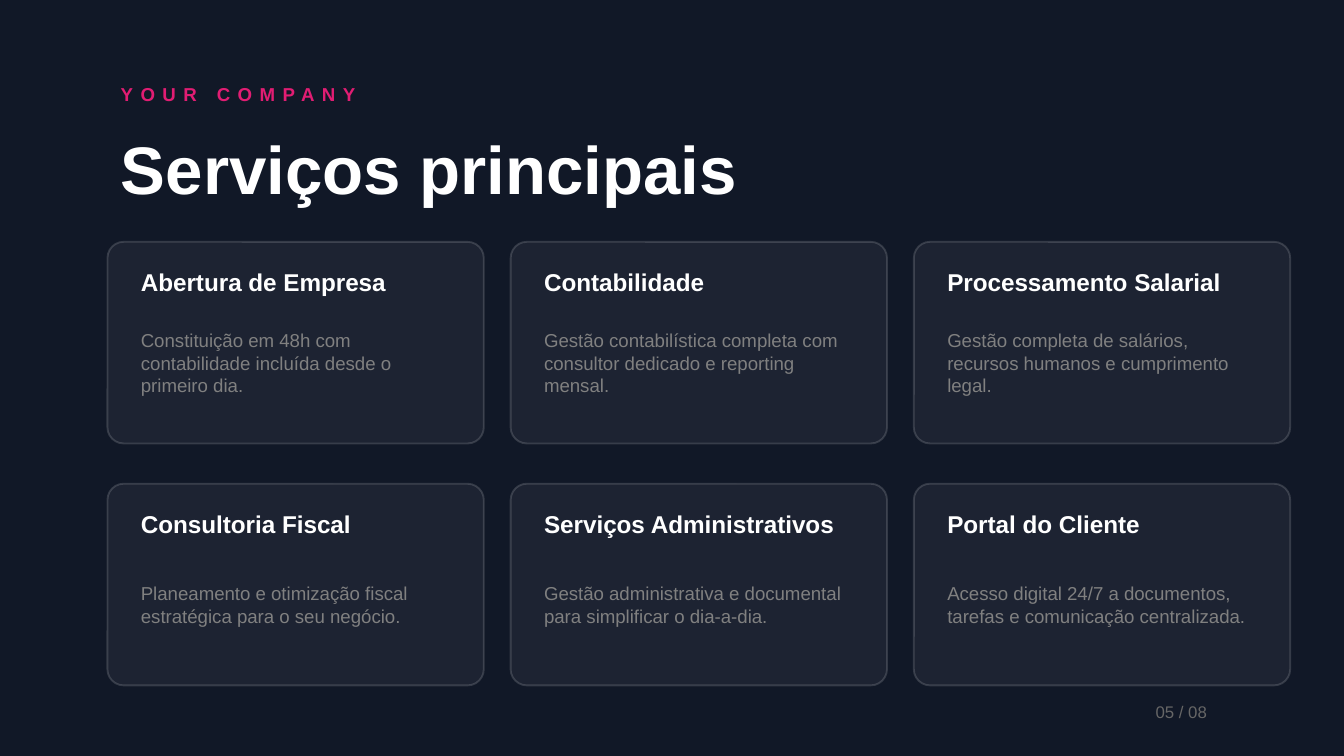
from lxml import etree
from pptx import Presentation
from pptx.dml.color import RGBColor
from pptx.enum.shapes import MSO_SHAPE
from pptx.enum.text import MSO_ANCHOR, MSO_AUTO_SIZE, PP_ALIGN
from pptx.oxml.ns import qn
from pptx.util import Pt

ROUNDED = MSO_SHAPE.ROUNDED_RECTANGLE
MIDDLE = MSO_ANCHOR.MIDDLE
NO_AUTOFIT = MSO_AUTO_SIZE.NONE
LEFT = PP_ALIGN.LEFT

PX = 4572  # EMU per px, 200 px to the inch
FONT = "Arial"
TITLE_ONLY = 5
COLORS = {
    "background": "111827",
    "accent": "E11D73",
    "white": "FFFFFF",
    "description": "808080",
    "page": "666666",
}
SERVICES = [
    ("Abertura de Empresa",
     "Constituição em 48h com contabilidade incluída desde o primeiro dia."),
    ("Contabilidade",
     "Gestão contabilística completa com consultor dedicado e reporting mensal."),
    ("Processamento Salarial",
     "Gestão completa de salários, recursos humanos e cumprimento legal."),
    ("Consultoria Fiscal",
     "Planeamento e otimização fiscal estratégica para o seu negócio."),
    ("Serviços Administrativos",
     "Gestão administrativa e documental para simplificar o dia-a-dia."),
    ("Portal do Cliente",
     "Acesso digital 24/7 a documentos, tarefas e comunicação centralizada."),
]


def emu(*lengths):
    return [length * PX for length in lengths]


def rgb(name):
    return RGBColor.from_string(COLORS[name])


def write(slide, box, text, size, color, bold=False, spacing=0, holder=None):
    """Put text in the box, in a placeholder if one is given; spacing is in points."""
    if holder is None:
        holder = slide.shapes.add_textbox(*emu(*box))
    else:
        holder.left, holder.top, holder.width, holder.height = emu(*box)
    frame = holder.text_frame
    frame.word_wrap = True
    frame.auto_size = NO_AUTOFIT
    frame.vertical_anchor = MIDDLE
    paragraph = frame.paragraphs[0]
    paragraph.alignment = LEFT
    run = paragraph.add_run()
    run.text = text
    run.font.name = FONT
    run.font.size = Pt(size)
    run.font.bold = bold
    run.font.color.rgb = rgb(color)
    if spacing:
        run.font._element.set("spc", str(spacing * 100))


def set_opacity(fill_parent, percent):
    color = fill_parent.find(qn("a:solidFill"))[0]
    etree.SubElement(color, qn("a:alpha")).set("val", str(percent * 1000))


def add_header(slide, left, top, width):
    write(slide, (left, top, width, 80), "YOUR COMPANY", 10, "accent",
          bold=True, spacing=4)
    write(slide, (left, top + 80, width, 140), "Serviços principais", 36, "white",
          bold=True, holder=slide.shapes.title)


def add_card(slide, left, top, width, height, service, description):
    card = slide.shapes.add_shape(ROUNDED, *emu(left, top, width, height))
    card.adjustments[0] = 0.08
    card.shadow.inherit = False
    card.fill.solid()
    card.fill.fore_color.rgb = rgb("white")
    card.line.color.rgb = rgb("white")
    card.line.width = Pt(1)
    properties = card._element.spPr
    set_opacity(properties, 5)
    set_opacity(properties.find(qn("a:ln")), 15)

    text_left, text_width = left + 30, width - 60
    write(slide, (text_left, top + 20, text_width, 80), service, 13, "white", bold=True)
    write(slide, (text_left, top + 100, text_width, 160), description, 10, "description")


def add_services(slide, left, top, columns=3):
    width, height, column_gap, row_gap = 560, 300, 40, 60
    for index, (service, description) in enumerate(SERVICES):
        row, column = divmod(index, columns)
        add_card(slide, left + column * (width + column_gap),
                 top + row * (height + row_gap), width, height, service, description)


def main():
    deck = Presentation()
    deck.slide_width, deck.slide_height = emu(2000, 1125)
    slide = deck.slides.add_slide(deck.slide_layouts[TITLE_ONLY])
    slide.background.fill.solid()
    slide.background.fill.fore_color.rgb = rgb("background")

    add_header(slide, 160, 100, 1600)
    add_services(slide, 160, 360)
    write(slide, (1700, 1020, 240, 80), "05 / 08", 9, "page")
    deck.save("out.pptx")


if __name__ == "__main__":
    main()
